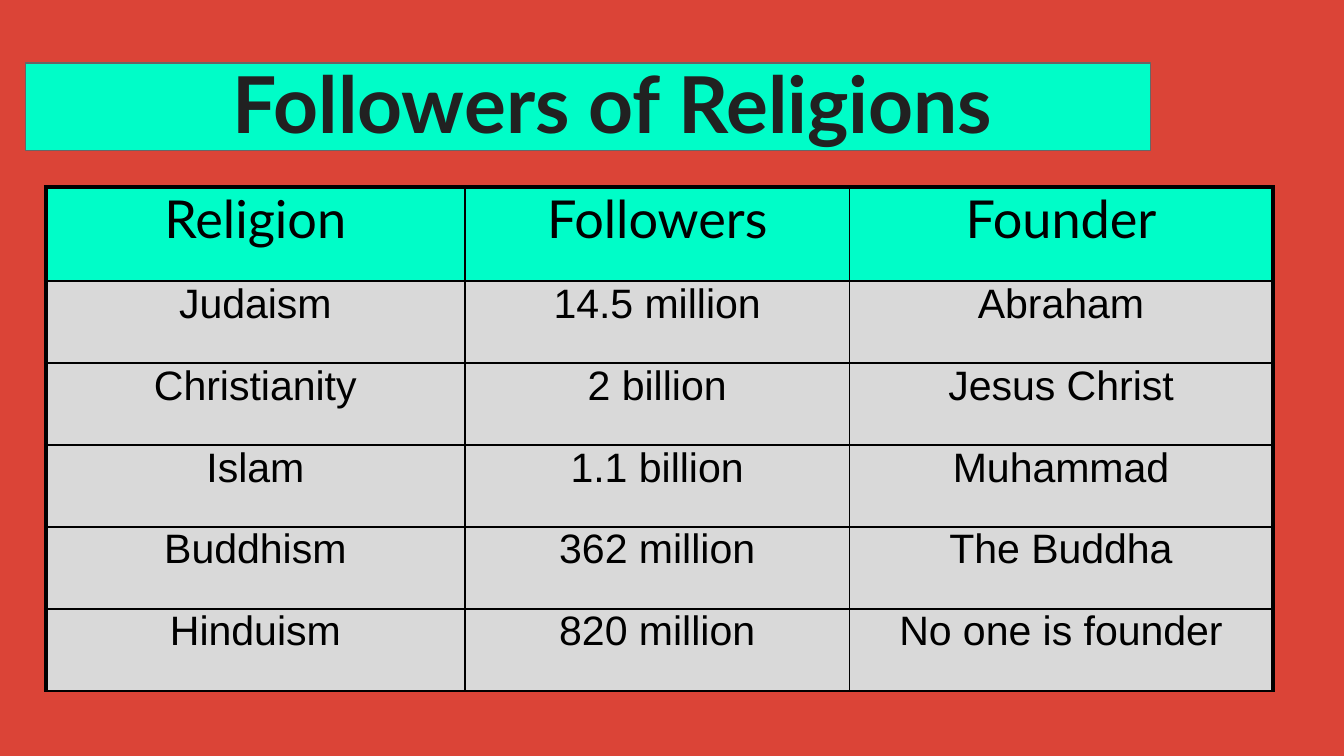
from lxml.etree import SubElement
from pptx import Presentation
from pptx.dml.color import RGBColor
from pptx.enum.shapes import MSO_SHAPE
from pptx.enum.text import MSO_ANCHOR, PP_ALIGN
from pptx.oxml.ns import qn
from pptx.util import Inches, Pt

COLORS = {
    "background": "DB4437",
    "accent": "00FDC8",
    "band_line": "666666",
    "title": "212121",
    "body": "D9D9D9",
    "black": "000000",
}
TITLE_FORMAT = {"name": "Lato", "size": Pt(42), "bold": True}
HEADER_FORMAT = {"name": "Lato", "size": Pt(28), "bold": False}
BODY_FORMAT = {"name": "Arial", "size": Pt(22), "bold": False}
NO_MARGINS = dict.fromkeys(
    ("margin_left", "margin_top", "margin_right", "margin_bottom"), 0)
TITLE_MARGINS = dict.fromkeys(NO_MARGINS, Inches(0.1))

COLUMN_WIDTHS = (3.12, 2.86, 3.15)
HEADER_HEIGHT, BODY_HEIGHT = 0.7, 0.61
THIN, THICK = Pt(1), Pt(2.25)
ROWS = (
    ("Religion", "Followers", "Founder"),
    ("Judaism", "14.5 million", "Abraham"),
    ("Christianity", "2 billion", "Jesus Christ"),
    ("Islam", "1.1 billion", "Muhammad"),
    ("Buddhism", "362 million", "The Buddha"),
    ("Hinduism", "820 million", "No one is founder"),
)


def rgb(name):
    return RGBColor.from_string(COLORS[name])


def set_attributes(target, values):
    for name, value in values.items():
        setattr(target, name, value)


def paint(fill, color):
    fill.solid()
    fill.fore_color.rgb = rgb(color)


def write(frame, text, font_format, color):
    """Put one centred paragraph into a text frame."""
    para = frame.paragraphs[0]
    para.alignment = PP_ALIGN.CENTER
    span = para.add_run()
    span.text = text
    set_attributes(span.font, font_format)
    span.font.color.rgb = rgb(color)


def add_border(cell, side, width):
    """Draw one side of a cell; call in the order L, R, T, B, before the fill."""
    properties = cell._tc.get_or_add_tcPr()
    line = SubElement(properties, qn(f"a:ln{side}"), w=str(width))
    fill = SubElement(line, qn("a:solidFill"))
    SubElement(fill, qn("a:srgbClr"), val=COLORS["black"])


def add_heading(page, left, top):
    """Place the title over its coloured band."""
    band = page.shapes.add_shape(
        MSO_SHAPE.RECTANGLE, Inches(left), Inches(top + 0.15),
        Inches(8.37), Inches(0.65))
    band.shadow.inherit = False
    paint(band.fill, "accent")
    band.line.color.rgb = rgb("band_line")
    band.line.width = Pt(0.75)

    title = page.shapes.title
    title.element.addprevious(band.element)
    set_attributes(title, {
        "left": Inches(left + 0.15), "top": Inches(top),
        "width": Inches(8.58), "height": Inches(0.88)})
    frame = title.text_frame
    set_attributes(frame, {
        **TITLE_MARGINS, "word_wrap": True,
        "vertical_anchor": MSO_ANCHOR.MIDDLE})
    write(frame, "Followers of Religions ", TITLE_FORMAT, "title")


def add_religion_table(page, left, top):
    last_column = len(COLUMN_WIDTHS) - 1
    heights = [HEADER_HEIGHT] + [BODY_HEIGHT] * (len(ROWS) - 1)
    table = page.shapes.add_table(
        len(ROWS), len(COLUMN_WIDTHS), Inches(left), Inches(top),
        Inches(sum(COLUMN_WIDTHS)), Inches(sum(heights))).table
    table.horz_banding = False
    for column, width in zip(table.columns, COLUMN_WIDTHS):
        column.width = Inches(width)
    for row_index, (row, height) in enumerate(zip(table.rows, heights)):
        row.height = Inches(height)
        is_header = row_index == 0
        for column_index, cell in enumerate(row.cells):
            borders = {
                "L": THICK if column_index == 0 else THIN,
                "R": THICK if column_index == last_column else THIN,
                "T": THICK if is_header else THIN,
                "B": THIN,
            }
            for side, width in borders.items():
                add_border(cell, side, width)
            paint(cell.fill, "accent" if is_header else "body")
            set_attributes(
                cell, {**NO_MARGINS, "vertical_anchor": MSO_ANCHOR.TOP})
            write(cell.text_frame, ROWS[row_index][column_index],
                  HEADER_FORMAT if is_header else BODY_FORMAT, "black")


def main():
    deck = Presentation()
    deck.slide_width = Inches(10)
    deck.slide_height = deck.slide_width * 9 // 16
    page = deck.slides.add_slide(deck.slide_layouts.get_by_name("Title Only"))
    paint(page.background.fill, "background")
    add_heading(page, 0.19, 0.32)
    add_religion_table(page, 0.34, 1.39)
    deck.save("out.pptx")


if __name__ == "__main__":
    main()
